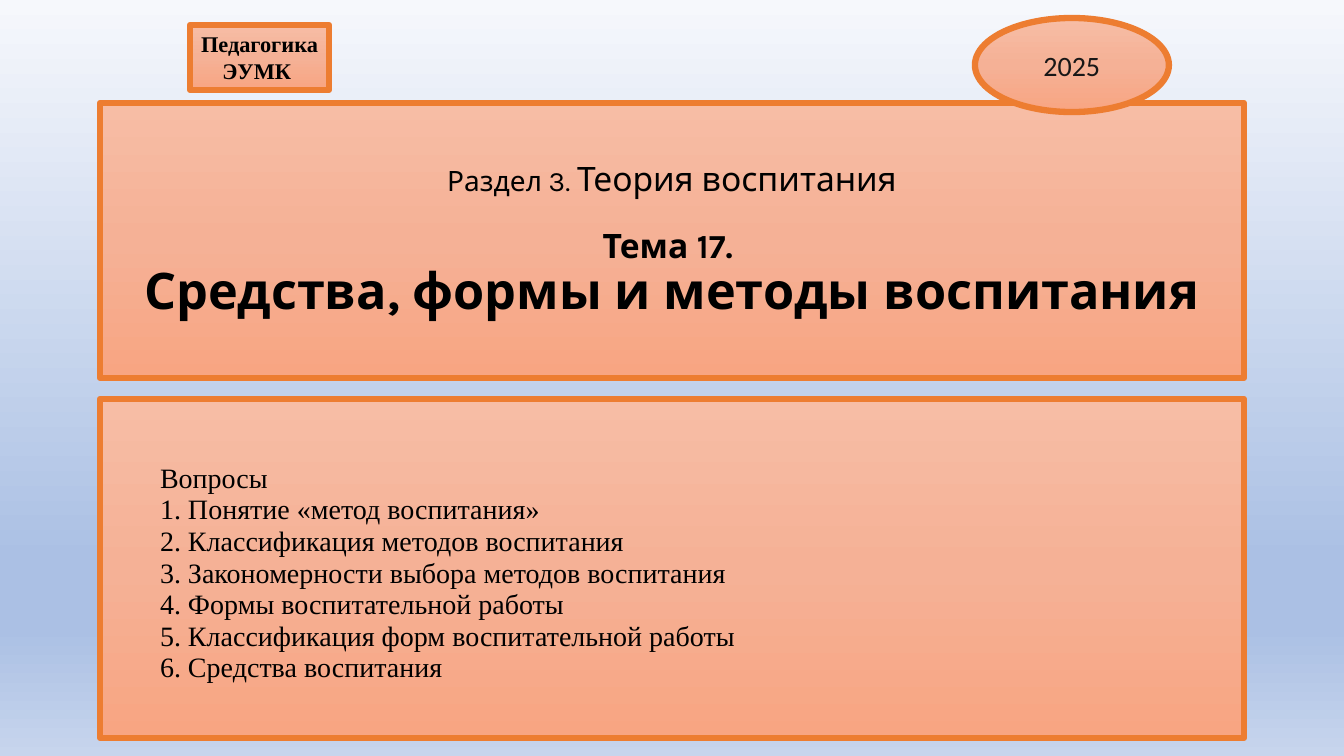
"""Builds the opening slide of a lecture on means, forms and methods of upbringing."""
from copy import deepcopy
from dataclasses import dataclass

from pptx import Presentation
from pptx.dml.color import RGBColor
from pptx.enum.shapes import MSO_SHAPE
from pptx.enum.text import MSO_ANCHOR, MSO_AUTO_SIZE, PP_ALIGN
from pptx.oxml.ns import qn
from pptx.util import Emu, Pt

RECTANGLE, OVAL = MSO_SHAPE.RECTANGLE, MSO_SHAPE.OVAL
TOP, MIDDLE, BOTTOM = MSO_ANCHOR.TOP, MSO_ANCHOR.MIDDLE, MSO_ANCHOR.BOTTOM
LEFT, CENTER = PP_ALIGN.LEFT, PP_ALIGN.CENTER
NO_AUTOFIT = MSO_AUTO_SIZE.NONE
EMU_PER_PX = 914400 / 100.8


@dataclass(frozen=True)
class Theme:
    background: tuple = ((0, "F6F8FC"), (74, "ABC0E4"), (83, "ABC0E4"), (100, "C7D5ED"))
    panel: tuple = ((0, "F7BDA5"), (50, "F5B196"), (100, "F8A582"))
    border: str = "ED7D31"
    text: str = "000000"
    year_text: str = "181717"
    title_font: str = "Karla"
    body_font: str = "Times New Roman"
    year_font: str = "Calibri"
    border_width: float = 4.5
    label_size: int = 16
    body_size: int = 20
    heading_size: int = 24
    topic_size: int = 36


THEME = Theme()
SLIDE_SIZE = (1344, 756)
PANEL_LEFT, PANEL_WIDTH = 100, 1144
TITLE_BOX = (PANEL_LEFT, 103, PANEL_WIDTH, 275)
QUESTIONS_BOX = (PANEL_LEFT, 399, PANEL_WIDTH, 339)
LABEL_BOX = (190, 25, 139, 65)
YEAR_BOX = (975, 18, 194, 94)

TITLE_LINES = [
    [("Раздел 3. ", THEME.body_size, False), ("Теория воспитания", THEME.heading_size, False)],
    [("Тема 17. ", THEME.heading_size, True)],
    [("Средства, формы и методы воспитания", THEME.topic_size, True)],
]
QUESTIONS_HEADING = "Вопросы"
QUESTIONS = [
    "Понятие «метод воспитания»",
    "Классификация методов воспитания",
    "Закономерности выбора методов воспитания",
    "Формы воспитательной работы",
    "Классификация форм воспитательной работы",
    "Средства воспитания",
]
LABEL_LINES = ["Педагогика", "ЭУМК "]
YEAR = "2025"


def px(length):
    return Emu(round(length * EMU_PER_PX))


def paint_gradient(fill, element, stops):
    fill.gradient()
    fill.gradient_angle = 270
    stop_list = element.find(".//" + qn("a:gsLst"))
    while len(stop_list) < len(stops):
        stop_list.append(deepcopy(stop_list[0]))
    for stop, (position, color) in zip(fill.gradient_stops, stops):
        stop.position = position / 100
        stop.color.rgb = RGBColor.from_string(color)


def style_panel(shape, box):
    shape.left, shape.top, shape.width, shape.height = map(px, box)
    paint_gradient(shape.fill, shape._element, THEME.panel)
    shape.line.color.rgb = RGBColor.from_string(THEME.border)
    shape.line.width = Pt(THEME.border_width)


def add_panel(slide, kind, box):
    shape = slide.shapes.add_shape(kind, *map(px, box))
    shape.shadow.inherit = False
    style_panel(shape, box)
    return shape


def format_run(run, font, size, color, bold=False):
    run.font.name = font
    run.font.size = Pt(size)
    run.font.bold = bold
    run.font.color.rgb = RGBColor.from_string(color)


def write_lines(shape, lines, font, size, color, alignment, bold=False, spacing=1.0):
    shape.text_frame.text = "\n".join(lines)
    for paragraph in shape.text_frame.paragraphs:
        paragraph.alignment = alignment
        paragraph.line_spacing = spacing
        for run in paragraph.runs:
            format_run(run, font, size, color, bold)


def write_title(title):
    style_panel(title, TITLE_BOX)
    frame = title.text_frame
    frame.auto_size = NO_AUTOFIT
    frame.word_wrap = True
    frame.vertical_anchor = BOTTOM
    frame.margin_bottom = px(58)
    frame.text = "\n" * (len(TITLE_LINES) - 1)
    for paragraph, parts in zip(frame.paragraphs, TITLE_LINES):
        paragraph.alignment = CENTER
        paragraph.line_spacing = 0.9
        paragraph.space_before = Pt(0)
        for text, size, bold in parts:
            run = paragraph.add_run()
            run.text = text
            format_run(run, THEME.title_font, size, THEME.text, bold)
    frame.paragraphs[1].space_before = Pt(22)


def write_questions(shape):
    frame = shape.text_frame
    frame.word_wrap = True
    frame.vertical_anchor = TOP
    frame.margin_left, frame.margin_top = px(60), px(64)
    numbered = [f"{number}. {question}" for number, question in enumerate(QUESTIONS, 1)]
    write_lines(shape, [QUESTIONS_HEADING] + numbered, THEME.body_font, THEME.body_size,
                THEME.text, LEFT, spacing=0.94)


def main():
    presentation = Presentation()
    presentation.slide_width, presentation.slide_height = map(px, SLIDE_SIZE)
    slide = presentation.slides.add_slide(presentation.slide_layouts[5])
    paint_gradient(slide.background.fill, slide.background._cSld, THEME.background)

    write_title(slide.shapes.title)
    write_questions(add_panel(slide, RECTANGLE, QUESTIONS_BOX))

    label = add_panel(slide, RECTANGLE, LABEL_BOX)
    label.text_frame.word_wrap = False
    label.text_frame.vertical_anchor = TOP
    write_lines(label, LABEL_LINES, THEME.body_font, THEME.label_size, THEME.text, CENTER, bold=True)

    year = add_panel(slide, OVAL, YEAR_BOX)
    year.text_frame.vertical_anchor = MIDDLE
    write_lines(year, [YEAR], THEME.year_font, THEME.body_size, THEME.year_text, CENTER)

    presentation.save("out.pptx")


if __name__ == "__main__":
    main()
